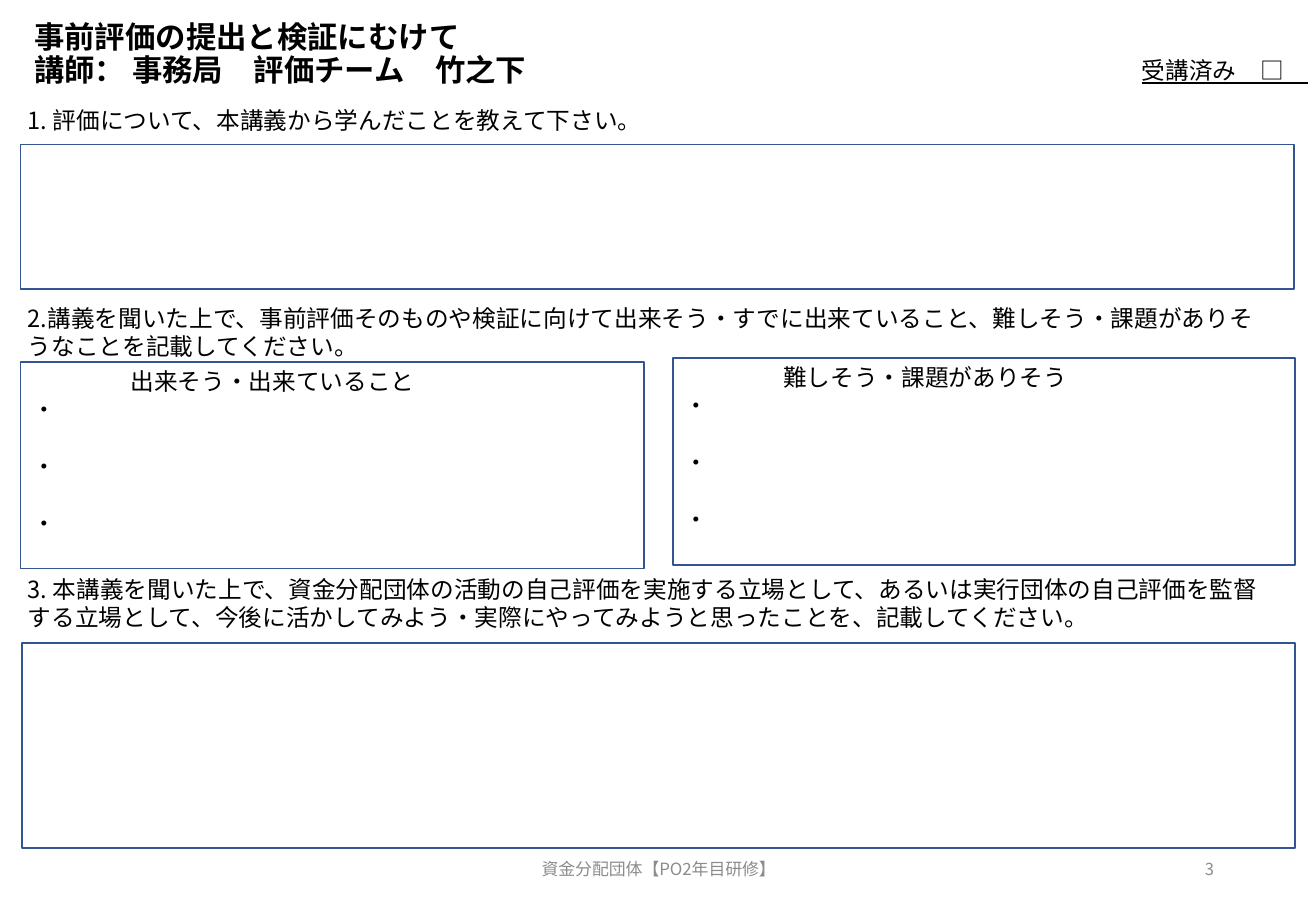
from pptx import Presentation
from pptx.dml.color import RGBColor
from pptx.enum.shapes import MSO_SHAPE
from pptx.enum.text import MSO_ANCHOR, PP_ALIGN
from pptx.oxml.ns import qn
from pptx.util import Cm, Pt

FONT = "Noto Sans CJK JP"
COLORS = {"text": "000000", "muted": "8C8C8C", "line": "325491", "fill": "FFFFFF"}

# Content; every position is left, top, width, height in cm
TITLE_LINES = ["事前評価の提出と検証にむけて", "講師： 事務局　評価チーム　竹之下"]
QUESTIONS = [
    ("1. 評価について、本講義から学んだことを教えて下さい。",
     (0.33, 2.08, 26.39, 0.86)),
    ("2.講義を聞いた上で、事前評価そのものや検証に向けて出来そう・すでに出来ていること、"
     "難しそう・課題がありそうなことを記載してください。",
     (0.33, 6.22, 26.62, 1.45)),
    ("3. 本講義を聞いた上で、資金分配団体の活動の自己評価を実施する立場として、"
     "あるいは実行団体の自己評価を監督する立場として、"
     "今後に活かしてみよう・実際にやってみようと思ったことを、記載してください。",
     (0.33, 11.89, 26.62, 1.45)),
]
ANSWER_BOXES = [
    (None, (0.43, 3.02, 26.62, 3.02)),
    (None, (0.46, 13.44, 26.62, 4.29)),
    ("出来そう・出来ていること", (0.43, 7.57, 13.03, 4.32)),
    ("難しそう・課題がありそう", (14.07, 7.49, 13.0, 4.32)),
]
BULLET = "・"
BULLET_COUNT = 3
ATTENDED = ("受講済み　□　", (23.62, 1.04, 5.11, 0.86))
FOOTER = ("資金分配団体【PO2年目研修】", (9.12, 17.65, 9.3, 1.02))
PAGE_NUMBER = ("3", (19.43, 17.65, 6.2, 1.02))


def add_run(paragraph, text, size=14, color="text", bold=False, underline=False):
    run = paragraph.add_run()
    run.text = text
    font = run.font
    font.name, font.size, font.bold, font.underline = FONT, Pt(size), bold, underline
    font.color.rgb = RGBColor.from_string(COLORS[color])
    east_asian = run._r.get_or_add_rPr().makeelement(qn("a:ea"), {"typeface": FONT})
    font._element.find(qn("a:latin")).addnext(east_asian)


def add_text(slide, text, place, align=PP_ALIGN.LEFT, anchor=MSO_ANCHOR.TOP, **style):
    frame = slide.shapes.add_textbox(*map(Cm, place)).text_frame
    frame.word_wrap = True
    frame.vertical_anchor = anchor
    paragraph = frame.paragraphs[0]
    paragraph.alignment = align
    add_run(paragraph, text, **style)


def add_answer_box(slide, heading, place):
    box = slide.shapes.add_shape(MSO_SHAPE.RECTANGLE, *map(Cm, place))
    box.shadow.inherit = False
    box.fill.solid()
    box.fill.fore_color.rgb = RGBColor.from_string(COLORS["fill"])
    box.line.color.rgb = RGBColor.from_string(COLORS["line"])
    box.line.width = Pt(1)
    if heading is None:
        return
    frame = box.text_frame
    frame.vertical_anchor = MSO_ANCHOR.TOP
    frame.margin_top = Cm(0.1)
    paragraph = frame.paragraphs[0]
    paragraph.alignment = PP_ALIGN.LEFT
    paragraph._p.get_or_add_pPr().set("marL", str(Cm(2.05)))
    add_run(paragraph, heading)
    for _ in range(BULLET_COUNT):
        paragraph = frame.add_paragraph()
        paragraph.alignment = PP_ALIGN.LEFT
        paragraph.space_after = Pt(16.8)
        add_run(paragraph, BULLET)


def main():
    presentation = Presentation()
    presentation.slide_width, presentation.slide_height = Cm(27.51), Cm(19.05)
    slide = presentation.slides.add_slide(presentation.slide_layouts[5])

    # Title
    title = slide.shapes.title
    title.left, title.top, title.width, title.height = map(Cm, (0.46, -0.1, 25.2, 2.51))
    title.text_frame.vertical_anchor = MSO_ANCHOR.MIDDLE
    paragraph = title.text_frame.paragraphs[0]
    paragraph.alignment = PP_ALIGN.LEFT
    paragraph.line_spacing = 0.9
    for index, line in enumerate(TITLE_LINES):
        if index:
            paragraph.add_line_break()
        add_run(paragraph, line, size=18, bold=True)

    # Answer boxes and questions
    for heading, place in ANSWER_BOXES:
        add_answer_box(slide, heading, place)
    for question, place in QUESTIONS:
        add_text(slide, question, place)

    # Attendance check, footer and page number
    add_text(slide, *ATTENDED, underline=True)
    add_text(slide, *FOOTER, align=PP_ALIGN.CENTER, anchor=MSO_ANCHOR.MIDDLE,
             size=10, color="muted")
    add_text(slide, *PAGE_NUMBER, align=PP_ALIGN.RIGHT, anchor=MSO_ANCHOR.MIDDLE,
             size=9.8, color="muted")

    presentation.save("out.pptx")


if __name__ == "__main__":
    main()
